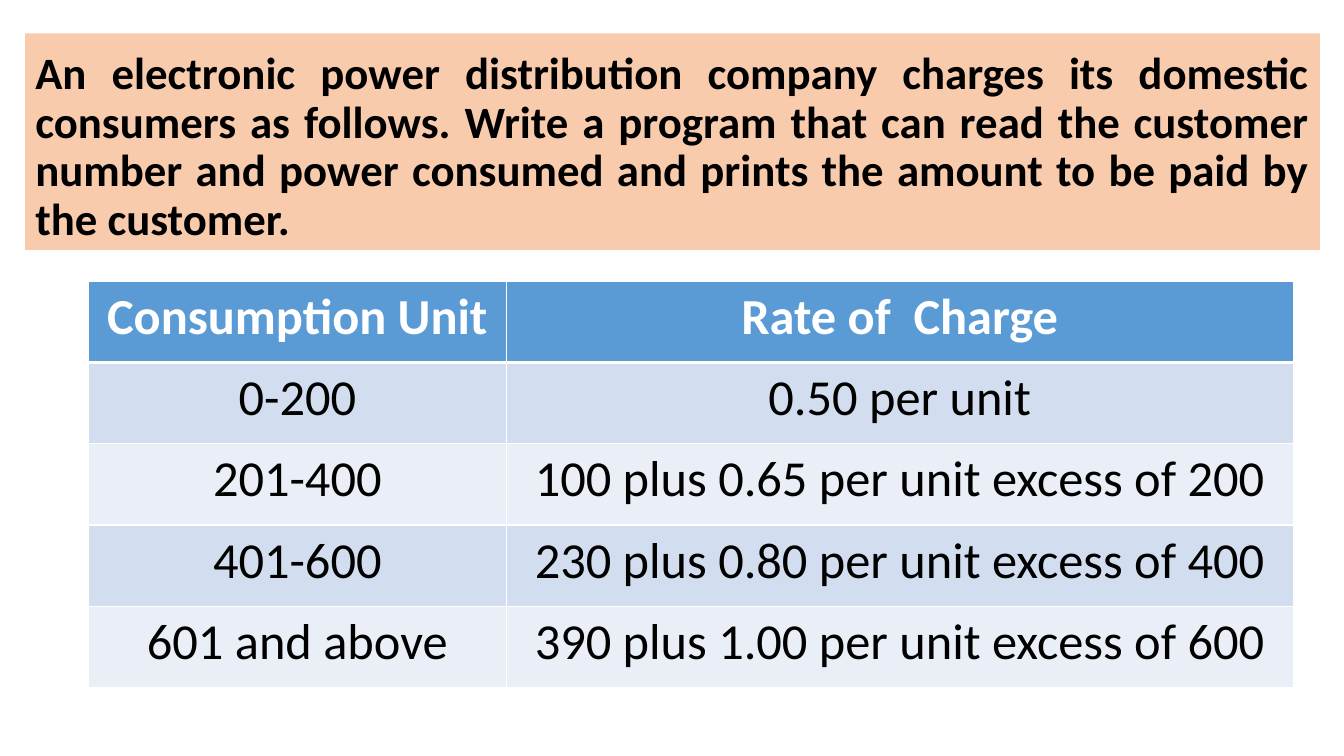
import pptx
import pptx.util
import pptx.dml.color
import pptx.enum.text
import lxml.etree
from dataclasses import dataclass

QUESTION = (
    "An electronic power distribution company charges its domestic consumers as follows. "
    "Write a program that can read the customer number and power consumed and prints "
    "the amount to be paid by the customer."
)
RATES = [
    ("Consumption Unit", "Rate of  Charge"),
    ("0-200", "0.50 per unit"),
    ("201-400", "100 plus 0.65 per unit excess of 200"),
    ("401-600", "230 plus 0.80 per unit excess of 400"),
    ("601 and above", "390 plus 1.00 per unit excess of 600"),
]
SLIDE_SIZE = (13.33, 7.5)
QUESTION_BOX = (0.25, 0.33, 12.84, 2.15)
TABLE_ORIGIN = (0.88, 2.79)
COLUMN_WIDTHS = (4.14, 7.81)
ROW_HEIGHT = 0.806


@dataclass(frozen=True)
class Theme:
    font: str = "Calibri"
    question_size: int = 32
    table_size: int = 36
    ink: str = "000000"
    paper: str = "FFFFFF"
    question_fill: str = "F8CBAD"
    header_fill: str = "5B9BD5"
    band_fills: tuple = ("D2DEEF", "EAEFF7")
    grid_line: int = 1
    header_line: int = 3


THEME = Theme()
ALIGN = pptx.enum.text.PP_ALIGN
ANCHOR = pptx.enum.text.MSO_ANCHOR
INCH = pptx.util.Inches


def paint(fill, color):
    fill.solid()
    fill.fore_color.rgb = pptx.dml.color.RGBColor.from_string(color)


def write(frame, text, size, color, bold, align):
    para = frame.paragraphs[0]
    para.alignment = align
    span = para.add_run()
    span.text = text
    span.font.name = THEME.font
    span.font.size = pptx.util.Pt(size)
    span.font.bold = bold
    paint(span.font.fill, color)
    return para


def draw_border(cell, side, points):
    namespace = "{http://schemas.openxmlformats.org/drawingml/2006/main}"
    properties = cell._tc.get_or_add_tcPr()
    line = lxml.etree.SubElement(properties, namespace + "ln" + side, w=str(pptx.util.Pt(points)))
    solid = lxml.etree.SubElement(line, namespace + "solidFill")
    lxml.etree.SubElement(solid, namespace + "srgbClr", val=THEME.paper)


def add_question(page):
    box = page.shapes.title
    box.left, box.top, box.width, box.height = map(INCH, QUESTION_BOX)
    paint(box.fill, THEME.question_fill)
    frame = box.text_frame
    frame.word_wrap = True
    frame.auto_size = pptx.enum.text.MSO_AUTO_SIZE.NONE
    frame.vertical_anchor = ANCHOR.BOTTOM
    para = write(frame, QUESTION, THEME.question_size, THEME.ink, True, ALIGN.JUSTIFY)
    para.line_spacing = 0.9


def add_rates(page):
    size = (sum(COLUMN_WIDTHS), ROW_HEIGHT * len(RATES))
    table = page.shapes.add_table(
        len(RATES), len(COLUMN_WIDTHS), *map(INCH, TABLE_ORIGIN + size)
    ).table
    for column, width in zip(table.columns, COLUMN_WIDTHS):
        column.width = INCH(width)
    for row_index, texts in enumerate(RATES):
        table.rows[row_index].height = INCH(ROW_HEIGHT)
        header = row_index == 0
        fill = THEME.header_fill if header else THEME.band_fills[(row_index - 1) % 2]
        color = THEME.paper if header else THEME.ink
        for column_index, text in enumerate(texts):
            cell = table.cell(row_index, column_index)
            for side in "LRTB":
                thick = (row_index, side) in ((0, "B"), (1, "T"))
                draw_border(cell, side, THEME.header_line if thick else THEME.grid_line)
            paint(cell.fill, fill)
            write(cell.text_frame, text, THEME.table_size, color, header, ALIGN.CENTER)


def main():
    deck = pptx.Presentation()
    deck.slide_width, deck.slide_height = map(INCH, SLIDE_SIZE)
    page = deck.slides.add_slide(deck.slide_layouts.get_by_name("Title Only"))
    paint(page.background.fill, THEME.paper)
    add_question(page)
    add_rates(page)
    deck.save("out.pptx")


if __name__ == "__main__":
    main()
